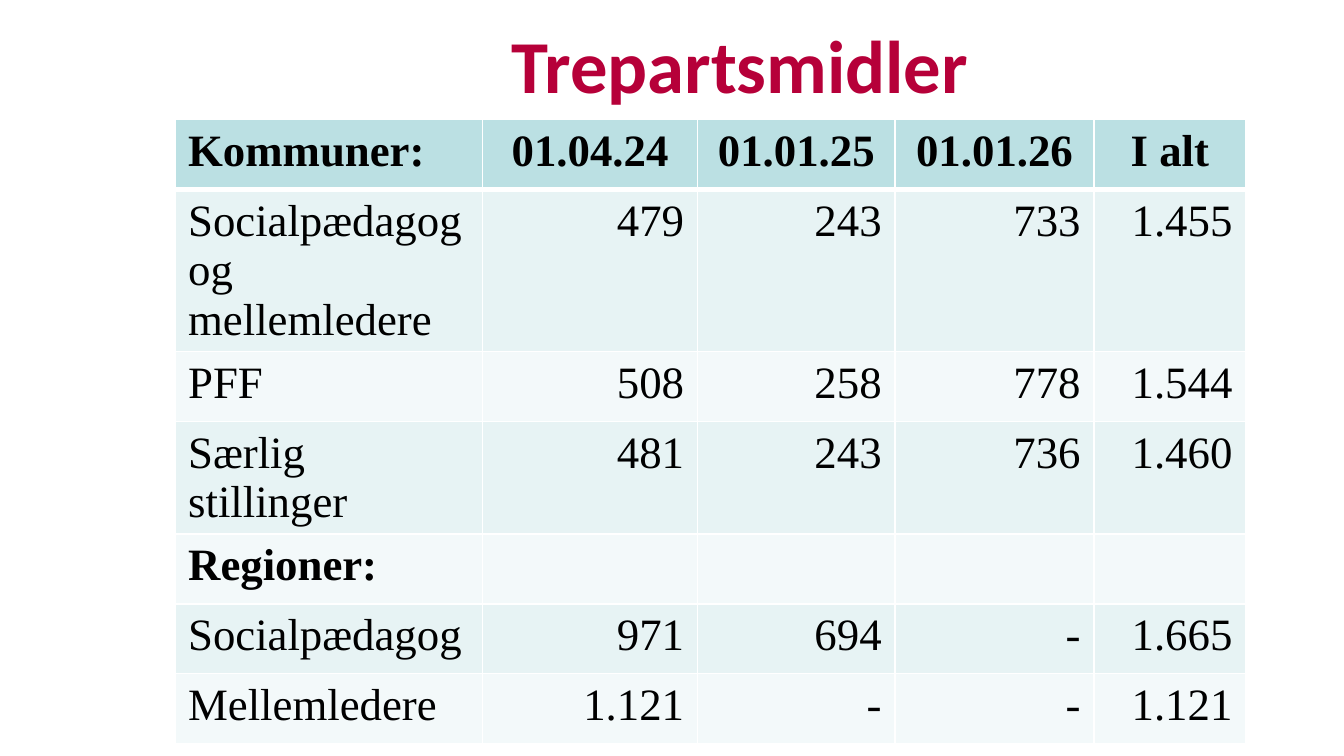
from lxml import etree
from pptx import Presentation
from pptx.dml.color import RGBColor
from pptx.enum.text import MSO_ANCHOR, MSO_AUTO_SIZE, PP_ALIGN
from pptx.oxml.ns import qn
from pptx.util import Inches, Pt

LEFT, CENTER, RIGHT = PP_ALIGN.LEFT, PP_ALIGN.CENTER, PP_ALIGN.RIGHT
TOP = MSO_ANCHOR.TOP
NO_AUTOFIT = MSO_AUTO_SIZE.NONE
TITLE_ONLY = 5

SLIDE_WIDTH = 10
SLIDE_HEIGHT = SLIDE_WIDTH * 9 / 16
COLUMN_WIDTHS = [2.29, 1.6, 1.47, 1.48, 1.13]
ROW_HEIGHT = 0.52
ROWS = [
    ["Kommuner:", "01.04.24", "01.01.25", "01.01.26", "I alt"],
    ["Socialpædagog og mellemledere", "479", "243", "733", "1.455"],
    ["PFF", "508", "258", "778", "1.544"],
    ["Særlig stillinger", "481", "243", "736", "1.460"],
    ["Regioner:", "", "", "", ""],
    ["Socialpædagog", "971", "694", "-", "1.665"],
    ["Mellemledere", "1.121", "-", "-", "1.121"],
]


def color(hex_value):
    return RGBColor.from_string(hex_value)


class SlideBuilder:
    """Holds the style and the slide being filled."""

    title_font, title_color = "Calibri", "B60039"
    table_font, table_color = "Times New Roman", "000000"
    header_fill, border_color = "BBE0E3", "FFFFFF"
    band_fills = ["F3F9FA", "E7F3F4"]

    def __init__(self, presentation):
        self.width = presentation.slide_width
        self.height = presentation.slide_height
        layout = presentation.slide_layouts[TITLE_ONLY]
        self.slide = presentation.slides.add_slide(layout)

    def box(self, left, top, width, height):
        """Turn shares of the slide's size into lengths."""
        return (int(left * self.width), int(top * self.height),
                int(width * self.width), int(height * self.height))

    def format_paragraph(self, paragraph, alignment, name, size, hex_value, bold):
        paragraph.alignment = alignment
        font = paragraph.font
        font.name, font.size, font.bold = name, Pt(size), bold
        font.color.rgb = color(hex_value)

    def title(self, text, *shares):
        shape = self.slide.shapes.title
        shape.left, shape.top, shape.width, shape.height = self.box(*shares)
        frame = shape.text_frame
        frame.text = text
        frame.auto_size = NO_AUTOFIT
        frame.vertical_anchor = TOP
        frame.margin_left = frame.margin_right = 0
        frame.margin_top = frame.margin_bottom = 0
        paragraph = frame.paragraphs[0]
        paragraph.line_spacing = 0.74
        self.format_paragraph(paragraph, CENTER, self.title_font, 40,
                              self.title_color, True)

    def border(self, cell, **widths):
        """Draw cell sides (L, R, T, B, in that order); call before filling."""
        properties = cell._tc.get_or_add_tcPr()
        for side, points in widths.items():
            line = etree.SubElement(properties, qn(f"a:ln{side}"), w=str(Pt(points)))
            fill = etree.SubElement(line, qn("a:solidFill"))
            etree.SubElement(fill, qn("a:srgbClr"), val=self.border_color)

    def table(self, rows, column_widths, row_height, left, top):
        """Place a banded table; rows whose label ends in a colon are bold."""
        area = self.box(left, top, sum(column_widths) / SLIDE_WIDTH,
                        row_height * len(rows) / SLIDE_HEIGHT)
        table = self.slide.shapes.add_table(
            len(rows), len(column_widths), *area).table
        for column, width in zip(table.columns, column_widths):
            column.width = Inches(width)
        for row_index, values in enumerate(rows):
            table.rows[row_index].height = Inches(row_height)
            is_header = row_index == 0
            fill = self.header_fill if is_header else self.band_fills[row_index % 2]
            bold = values[0].endswith(":")
            for column_index, value in enumerate(values):
                cell = table.cell(row_index, column_index)
                cell.text = value
                if is_header:
                    self.border(cell, L=1, R=1, T=1, B=3)
                cell.fill.solid()
                cell.fill.fore_color.rgb = color(fill)
                alignment = LEFT if column_index == 0 else CENTER if is_header else RIGHT
                self.format_paragraph(cell.text_frame.paragraphs[0], alignment,
                                      self.table_font, 24, self.table_color, bold)


def main():
    presentation = Presentation()
    presentation.slide_width = Inches(SLIDE_WIDTH)
    presentation.slide_height = Inches(SLIDE_HEIGHT)
    builder = SlideBuilder(presentation)
    builder.title("Trepartsmidler", 1.57 / SLIDE_WIDTH, 0.3 / SLIDE_HEIGHT,
                  7.87 / SLIDE_WIDTH, 1.18 / SLIDE_HEIGHT)
    builder.table(ROWS, COLUMN_WIDTHS, ROW_HEIGHT,
                  1.3 / SLIDE_WIDTH, 0.89 / SLIDE_HEIGHT)
    presentation.save("out.pptx")


if __name__ == "__main__":
    main()
